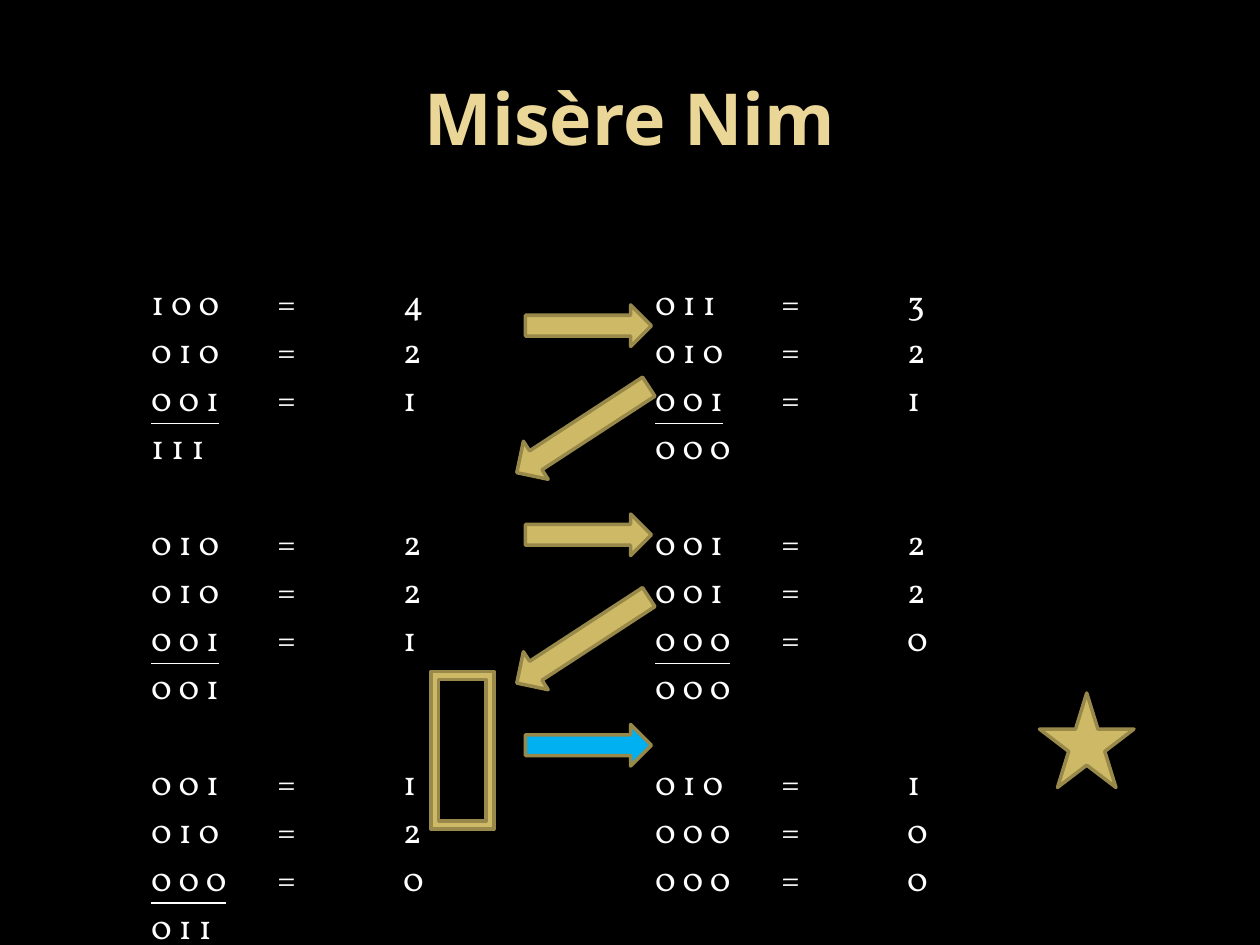
from lxml.etree import SubElement
from pptx import Presentation
from pptx.dml.color import RGBColor
from pptx.enum.shapes import MSO_SHAPE as Shape
from pptx.enum.text import MSO_ANCHOR as Anchor, PP_ALIGN as Align
from pptx.oxml.ns import qn
from pptx.util import Inches, Pt

BLACK = RGBColor(0x00, 0x00, 0x00)
WHITE = RGBColor(0xFF, 0xFF, 0xFF)
CREAM = RGBColor(0xEA, 0xD6, 0x96)
GOLD = RGBColor(0xCE, 0xB9, 0x66)
DARK_GOLD = RGBColor(0x98, 0x89, 0x4B)
BLUE = RGBColor(0x00, 0xB0, 0xF0)
ROW_HEIGHT = Pt(27.4)

# Each position: three heaps (binary, size) on both sides, then the two sums
POSITIONS = [
    ([("1 0 0", 4, "0 1 1", 3), ("0 1 0", 2, "0 1 0", 2), ("0 0 1", 1, "0 0 1", 1)],
     "1 1 1", "0 0 0"),
    ([("0 1 0", 2, "0 0 1", 2), ("0 1 0", 2, "0 0 1", 2), ("0 0 1", 1, "0 0 0", 0)],
     "0 0 1", "0 0 0"),
    ([("0 0 1", 1, "0 1 0", 1), ("0 1 0", 2, "0 0 0", 0), ("0 0 0", 0, "0 0 0", 0)],
     "0 1 1", ""),
]


def add_text_box(left, top, width, height):
    box = slide.shapes.add_textbox(Inches(left), Inches(top), Inches(width), Inches(height))
    frame = box.text_frame
    frame.word_wrap = True
    frame.margin_left = frame.margin_right = frame.margin_top = frame.margin_bottom = 0
    return frame


def add_figure(kind, left, top, width, height, color=GOLD, rotation=0):
    figure = slide.shapes.add_shape(
        kind, Inches(left), Inches(top), Inches(width), Inches(height))
    figure.shadow.inherit = False
    figure.fill.solid()
    figure.fill.fore_color.rgb = color
    figure.line.color.rgb = DARK_GOLD
    figure.line.width = Pt(2)
    figure.rotation = rotation


deck = Presentation()
deck.slide_width, deck.slide_height = Inches(10), Inches(7.5)
slide = deck.slides.add_slide(deck.slide_layouts[6])
slide.background.fill.solid()
slide.background.fill.fore_color.rgb = BLACK

# Title
title = add_text_box(0.5, 0.3, 9, 1.25)
title.vertical_anchor = Anchor.MIDDLE
para = title.paragraphs[0]
para.text = "Misère Nim"
para.alignment = Align.CENTER
para.font.name, para.font.size, para.font.bold = "Open Sans", Pt(41), True
para.font.color.rgb = CREAM

# Rows of the game as (text, underlined) pieces, with a gap before each position
rows = []
for heaps, left_sum, right_sum in POSITIONS:
    for number, (left, left_size, right, right_size) in enumerate(heaps):
        last = number == len(heaps) - 1
        rows.append((number == 0, [
            (left, last), (f"\t=\t{left_size}\t\t", False),
            (right, last and right_sum != ""), (f"\t=\t{right_size}", False)]))
    sums = f"{left_sum}\t\t\t\t{right_sum}" if right_sum else left_sum
    rows.append((False, [(sums, False)]))

game = add_text_box(1.2, 2.18, 8.2, 5.32)
for index, (starts_position, pieces) in enumerate(rows):
    para = game.add_paragraph() if index else game.paragraphs[0]
    para.line_spacing = ROW_HEIGHT
    para.space_before = ROW_HEIGHT if starts_position and index else Pt(0)
    tabs = SubElement(para._p.get_or_add_pPr(), qn("a:tabLst"))
    for inch in range(1, 7):
        SubElement(tabs, qn("a:tab"), pos=str(Inches(inch)), algn="l")
    for text, underlined in pieces:
        span = para.add_run()
        span.text = text
        span.font.name, span.font.size = "Vollkorn", Pt(19.6)
        span.font.color.rgb = WHITE
        span.font.underline = underlined

# Arrows for the moves across, and back down to the next position
for top, color in [(2.42, GOLD), (4.08, GOLD), (5.75, BLUE)]:
    add_figure(Shape.RIGHT_ARROW, 4.17, top, 1, 0.33, color)
for top in (3.23, 4.9):
    add_figure(Shape.RIGHT_ARROW, 4, top, 1.25, 0.36, rotation=146.9)

# Star for the win and frame around the deciding move
add_figure(Shape.STAR_5_POINT, 8.25, 5.5, 0.75, 0.75)
add_figure(Shape.FRAME, 3.42, 5.33, 0.5, 1.25)

deck.save("out.pptx")
